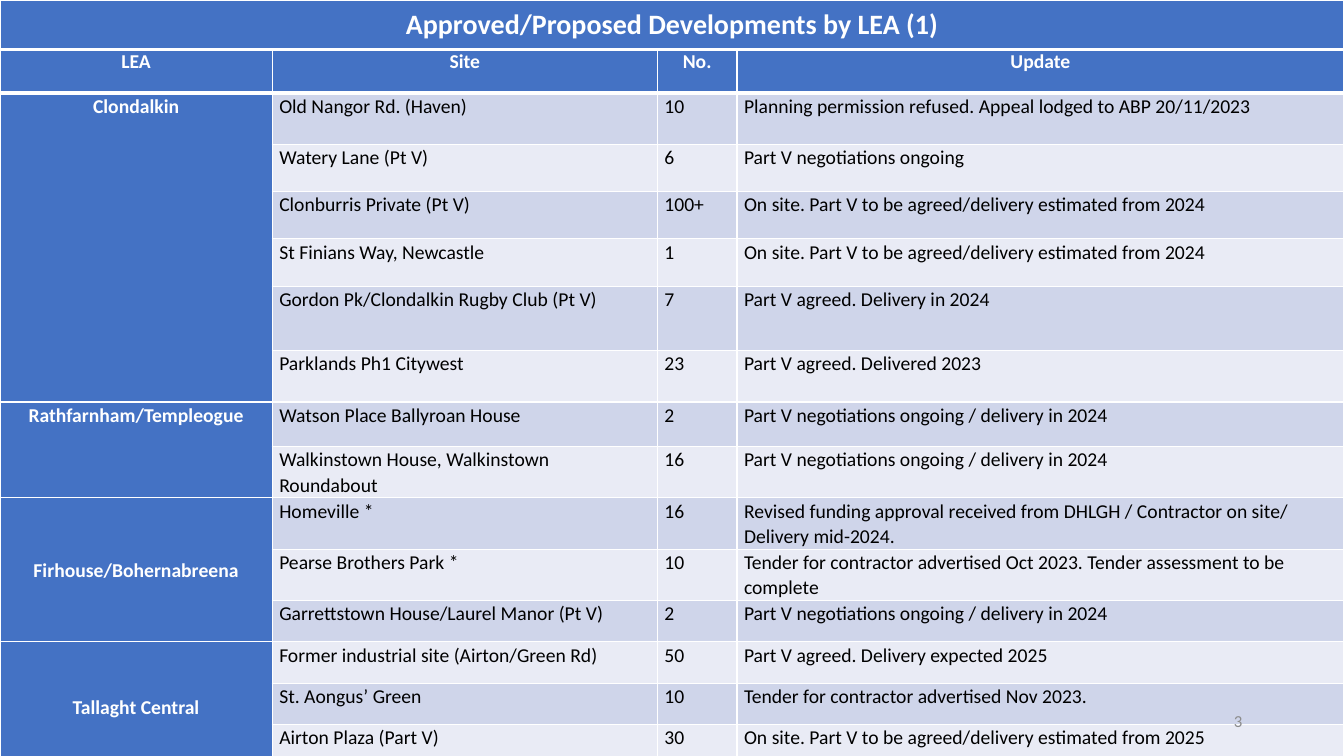
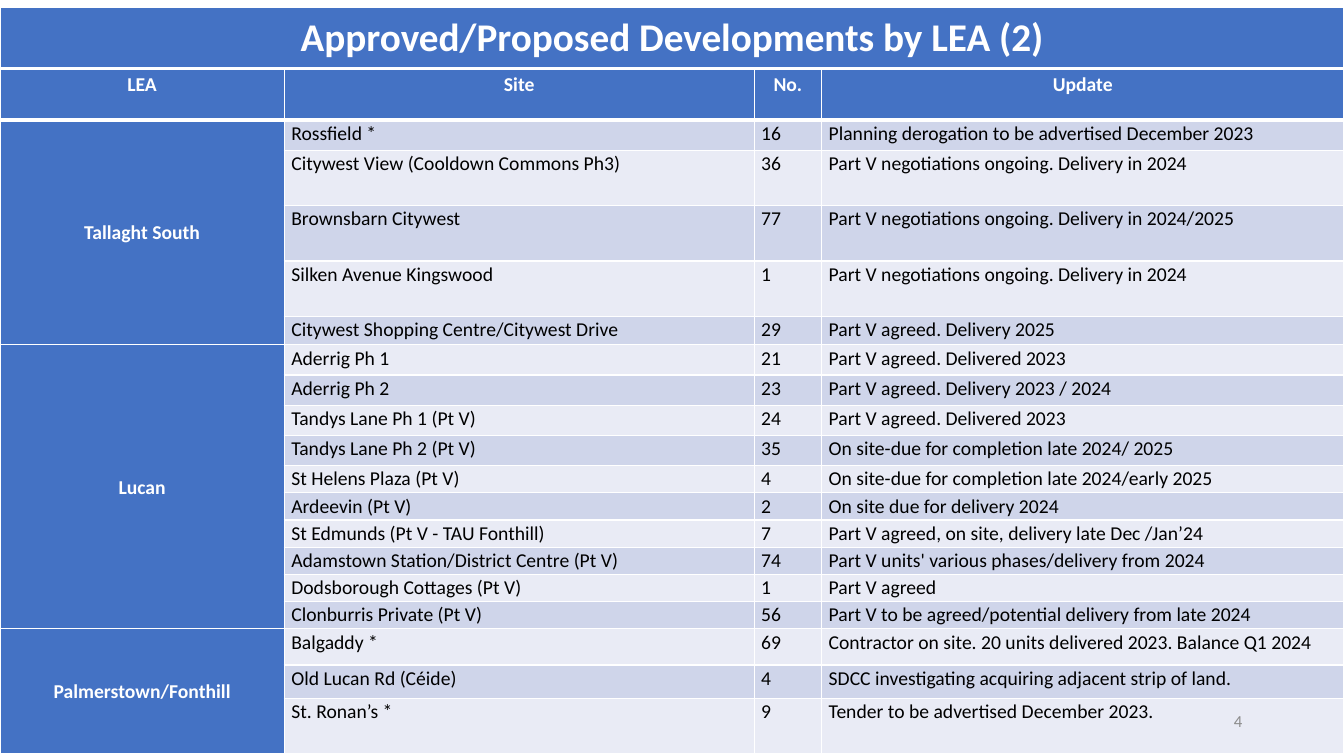
from pptx import Presentation
from pptx.dml.color import RGBColor
from pptx.enum import text
from pptx.oxml import parse_xml
from pptx.oxml.ns import nsdecls
from pptx.util import Inches, Pt

BLUE = RGBColor(0x44, 0x72, 0xC4)
BAND_DARK = RGBColor(0xCF, 0xD5, 0xEA)
BAND_LIGHT = RGBColor(0xE9, 0xEB, 0xF5)
WHITE = RGBColor(0xFF, 0xFF, 0xFF)
BLACK = RGBColor(0, 0, 0)
GREY = RGBColor(0x8C, 0x8C, 0x8C)

FONT = "Calibri"
WIDTH, HEIGHT = 13.33, 7.5
TABLE_TOP = 0.48
HEADINGS = ("LEA", "Site", "No.", "Update")

TOP, MIDDLE = text.MSO_ANCHOR.TOP, text.MSO_ANCHOR.MIDDLE
LEFT, CENTER, RIGHT = text.PP_ALIGN.LEFT, text.PP_ALIGN.CENTER, text.PP_ALIGN.RIGHT

# Each area: name, anchor of the name, rows of (height, site, number, update)
AREAS_1 = [
    ("Clondalkin", TOP, [
        (0.51, "Old Nangor Rd. (Haven)", "10",
         "Planning permission refused. Appeal lodged to ABP 20/11/2023"),
        (0.47, "Watery Lane (Pt V)", "6", "Part V negotiations ongoing"),
        (0.47, "Clonburris Private (Pt V)", "100+",
         "On site. Part V to be agreed/delivery estimated from 2024"),
        (0.47, "St Finians Way, Newcastle", "1",
         "On site. Part V to be agreed/delivery estimated from 2024"),
        (0.64, "Gordon Pk/Clondalkin Rugby Club (Pt V)", "7",
         "Part V agreed. Delivery in 2024"),
        (0.51, "Parklands Ph1 Citywest", "23", "Part V agreed. Delivered 2023"),
    ]),
    ("Rathfarnham/Templeogue", TOP, [
        (0.44, "Watson Place Ballyroan House", "2",
         "Part V negotiations ongoing / delivery in 2024"),
        (0.51, "Walkinstown House, Walkinstown Roundabout", "16",
         "Part V negotiations ongoing / delivery in 2024"),
    ]),
    ("Firhouse/Bohernabreena", MIDDLE, [
        (0.51, "Homeville *", "16",
         "Revised funding approval received from DHLGH / Contractor on site/ "
         "Delivery mid-2024."),
        (0.51, "Pearse Brothers Park *", "10",
         "Tender for contractor advertised Oct 2023. Tender assessment to be complete"),
        (0.41, "Garrettstown House/Laurel Manor (Pt V)", "2",
         "Part V negotiations ongoing / delivery in 2024"),
    ]),
    ("Tallaght Central", MIDDLE, [
        (0.41, "Former industrial site (Airton/Green Rd)", "50",
         "Part V agreed. Delivery expected 2025"),
        (0.41, "St. Aongus’ Green", "10", "Tender for contractor advertised Nov 2023."),
        (0.48, "Airton Plaza (Part V)", "30",
         "On site. Part V to be agreed/delivery estimated from 2025"),
    ]),
]

AREAS_2 = [
    ("Tallaght South", MIDDLE, [
        (0.3, "Rossfield *", "16", "Planning derogation to be advertised December 2023"),
        (0.55, "Citywest View (Cooldown Commons Ph3)", "36",
         "Part V negotiations ongoing. Delivery in 2024"),
        (0.55, "Brownsbarn Citywest", "77",
         "Part V negotiations ongoing. Delivery in 2024/2025"),
        (0.55, "Silken Avenue Kingswood", "1",
         "Part V negotiations ongoing. Delivery in 2024"),
        (0.28, "Citywest Shopping Centre/Citywest Drive", "29",
         "Part V agreed. Delivery 2025"),
    ]),
    ("Lucan", MIDDLE, [
        (0.3, "Aderrig Ph 1", "21", "Part V agreed. Delivered 2023"),
        (0.3, "Aderrig Ph 2", "23", "Part V agreed. Delivery 2023 / 2024"),
        (0.3, "Tandys Lane Ph 1 (Pt V)", "24", "Part V agreed. Delivered 2023"),
        (0.3, "Tandys Lane Ph 2 (Pt V)", "35",
         "On site-due for completion late 2024/ 2025"),
        (0.27, "St Helens Plaza (Pt V)", "4",
         "On site-due for completion late 2024/early 2025"),
        (0.27, "Ardeevin (Pt V)", "2", "On site due for delivery 2024"),
        (0.27, "St Edmunds (Pt V - TAU Fonthill)", "7",
         "Part V agreed, on site, delivery late Dec /Jan’24"),
        (0.27, "Adamstown Station/District Centre (Pt V)", "74",
         "Part V units' various phases/delivery from 2024"),
        (0.27, "Dodsborough Cottages (Pt V)", "1", "Part V agreed"),
        (0.27, "Clonburris Private (Pt V)", "56",
         "Part V to be agreed/potential delivery from late 2024"),
    ]),
    ("Palmerstown/Fonthill", MIDDLE, [
        (0.36, "Balgaddy *", "69",
         "Contractor on site. 20 units delivered 2023. Balance Q1 2024"),
        (0.33, "Old Lucan Rd (Céide)", "4",
         "SDCC investigating acquiring adjacent strip of land."),
        (0.55, "St. Ronan’s *", "9", "Tender to be advertised December 2023."),
    ]),
]


def write(frame, words, size=14, color=BLACK, bold=False, align=LEFT, spacing=None):
    para = frame.paragraphs[0]
    para.alignment = align
    para.line_spacing = spacing
    span = para.add_run()
    span.text = words
    span.font.name = FONT
    span.font.size = Pt(size)
    span.font.bold = bold
    span.font.color.rgb = color


def style_cell(cell, fill, anchor=TOP, margins=(0.07, 0), top=1, bottom=1):
    """Set fill, margins and white borders; top and bottom are line widths in points."""
    cell.margin_left = cell.margin_right = Inches(margins[0])
    cell.margin_top = cell.margin_bottom = Inches(margins[1])
    cell.vertical_anchor = anchor
    properties = cell._tc.get_or_add_tcPr()
    for side, width in (("L", 1), ("R", 1), ("T", top), ("B", bottom)):
        properties.append(parse_xml(
            f'<a:ln{side} {nsdecls("a")} w="{Pt(width)}"><a:solidFill>'
            f'<a:srgbClr val="{WHITE}"/></a:solidFill></a:ln{side}>'))
    cell.fill.solid()
    cell.fill.fore_color.rgb = fill


class Deck:
    def __init__(self):
        self.file = Presentation()
        self.file.slide_width = Inches(WIDTH)
        self.file.slide_height = Inches(HEIGHT)
        self.page = None

    def add_page(self):
        self.page = self.file.slides.add_slide(self.file.slide_layouts[6])

    def add_table(self, top, columns, heights):
        frame = self.page.shapes.add_table(
            len(heights), len(columns), 0, Inches(top),
            Inches(sum(columns)), Inches(sum(heights)))
        table = frame.table
        table.first_row = table.horz_banding = False
        for column, width in zip(table.columns, columns):
            column.width = Inches(width)
        for row, height in zip(table.rows, heights):
            row.height = Inches(height)
        return table

    def add_title(self, words, top, height, size):
        cell = self.add_table(top, [WIDTH], [height]).cell(0, 0)
        style_cell(cell, BLUE, MIDDLE, margins=(0.14, 0.07), bottom=3)
        write(cell.text_frame, words, size, WHITE, bold=True, align=CENTER)

    def add_developments(self, areas, columns, header_height, header_anchor):
        """Table of sites, with one merged cell for each area."""
        heights = [header_height] + [row[0] for area in areas for row in area[2]]
        table = self.add_table(TABLE_TOP, columns, heights)
        heading = dict(color=WHITE, bold=True, align=CENTER, spacing=1.07)
        for column, words in enumerate(HEADINGS):
            cell = table.cell(0, column)
            style_cell(cell, BLUE, header_anchor, bottom=3)
            write(cell.text_frame, words, **heading)

        index = 1
        for name, anchor, rows in areas:
            first = table.cell(index, 0)
            write(first.text_frame, name, **heading)
            for _, *values in rows:
                top = 3 if index == 1 else 1
                style_cell(table.cell(index, 0), BLUE, anchor, top=top)
                band = BAND_DARK if index % 2 else BAND_LIGHT
                for column, words in enumerate(values, 1):
                    cell = table.cell(index, column)
                    style_cell(cell, band, top=top)
                    write(cell.text_frame, words, spacing=1.07)
                index += 1
            first.merge(table.cell(index - 1, 0))

    def add_page_number(self, number):
        box = self.page.shapes.add_textbox(
            Inches(9.42), Inches(6.95), Inches(3), Inches(0.4))
        box.text_frame.word_wrap = True
        box.text_frame.vertical_anchor = MIDDLE
        write(box.text_frame, str(number), 12, GREY, align=RIGHT)


def main():
    deck = Deck()

    deck.add_page()
    deck.add_developments(AREAS_1, [2.7, 3.82, 0.79, 6.02], 0.44, TOP)
    deck.add_title("Approved/Proposed Developments by LEA (1)", 0, 0.49, 20)
    deck.add_page_number(3)

    deck.add_page()
    deck.add_developments(AREAS_2, [2.82, 4.66, 0.67, 5.18], 0.71, MIDDLE)
    deck.add_title("Approved/Proposed Developments by LEA (2)", 0.07, 0.61, 28)
    deck.add_page_number(4)

    deck.file.save("out.pptx")


if __name__ == "__main__":
    main()
